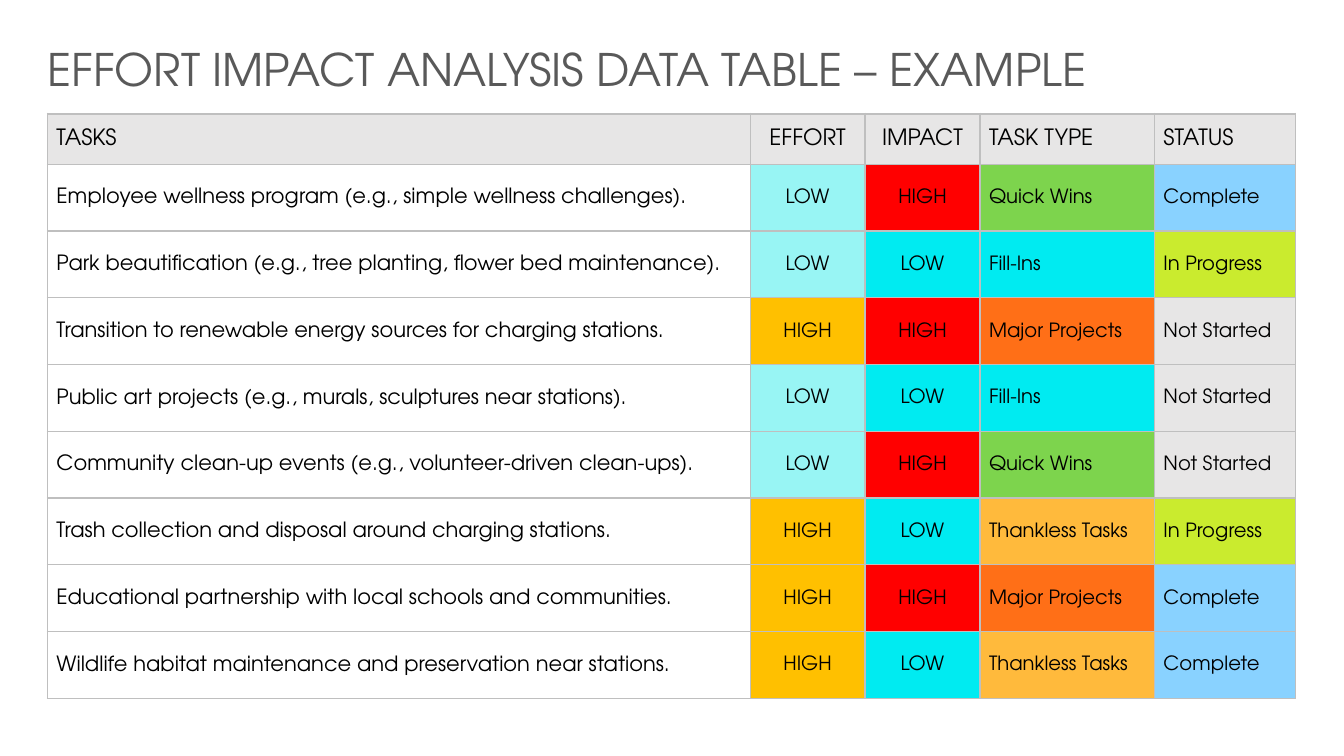
from pptx import Presentation
from pptx.dml.color import RGBColor
from pptx.enum.text import MSO_ANCHOR as Anchor, PP_ALIGN as Align
from pptx.oxml.ns import qn
from pptx.util import Inches, Pt
from lxml.etree import SubElement

HEADING = "EFFORT IMPACT ANALYSIS DATA TABLE – EXAMPLE"
HEADERS = ("TASKS", "EFFORT", "IMPACT", "TASK TYPE", "STATUS")
TASKS = [
    ("Employee wellness program (e.g., simple wellness challenges).", "LOW", "HIGH", "Quick Wins", "Complete"),
    ("Park beautification (e.g., tree planting, flower bed maintenance).", "LOW", "LOW", "Fill-Ins", "In Progress"),
    ("Transition to renewable energy sources for charging stations.", "HIGH", "HIGH", "Major Projects", "Not Started"),
    ("Public art projects (e.g., murals, sculptures near stations).", "LOW", "LOW", "Fill-Ins", "Not Started"),
    ("Community clean-up events (e.g., volunteer-driven clean-ups).", "LOW", "HIGH", "Quick Wins", "Not Started"),
    ("Trash collection and disposal around charging stations.", "HIGH", "LOW", "Thankless Tasks", "In Progress"),
    ("Educational partnership with local schools and communities.", "HIGH", "HIGH", "Major Projects", "Complete"),
    ("Wildlife habitat maintenance and preservation near stations.", "HIGH", "LOW", "Thankless Tasks", "Complete"),
]

COLORS = {
    "heading": "595959", "text": "000000", "border": "BFBFBF",
    "header": "E7E6E6", "task": "FFFFFF",
    "EFFORT LOW": "98F5F4", "EFFORT HIGH": "FFC000",
    "IMPACT LOW": "00EBF1", "IMPACT HIGH": "FF0000",
    "Quick Wins": "7DD44D", "Fill-Ins": "00EBF1",
    "Major Projects": "FF6F17", "Thankless Tasks": "FFBA3C",
    "Complete": "89D2FF", "In Progress": "CAEB2E", "Not Started": "E7E6E6",
}
FONT = "TeX Gyre Adventor"
COLUMN_WIDTHS = (6.97, 1.14, 1.14, 1.73, 1.4)
TABLE_LEFT, TABLE_TOP, TABLE_HEIGHT, HEADER_HEIGHT = 0.47, 1.13, 5.8, 0.5
CENTERED = ("EFFORT", "IMPACT")


def style_text(paragraph, size, color, align):
    paragraph.alignment = align
    font = paragraph.font
    for target in (font, *(run.font for run in paragraph.runs)):
        for name, value in {"name": FONT, "size": Pt(size), "bold": False}.items():
            setattr(target, name, value)
        target.color.rgb = RGBColor.from_string(COLORS[color])


def fill_key(row, header, value):
    if row == 0:
        return "header"
    if header == "TASKS":
        return "task"
    return f"{header} {value}" if header in CENTERED else value


def add_borders(cell, top_width):
    properties = cell._tc.get_or_add_tcPr()
    widths = {"a:lnL": 1, "a:lnR": 1, "a:lnT": top_width, "a:lnB": 1}
    for position, (side, width) in enumerate(widths.items()):
        line = SubElement(properties, qn(side), w=str(Pt(width)))
        SubElement(SubElement(line, qn("a:solidFill")), qn("a:srgbClr"), val=COLORS["border"])
        properties.insert(position, line)


def fill_cell(cell, row, header, value):
    centered = header in CENTERED
    cell.text = value
    formats = {
        "vertical_anchor": Anchor.MIDDLE,
        "margin_left": Inches(0.01 if centered else 0.09),
        "margin_right": Inches(0.01),
        "margin_top": Inches(0.01),
        "margin_bottom": 0,
    }
    for name, setting in formats.items():
        setattr(cell, name, setting)
    size = 16 if row == 0 else 15 if header == "TASKS" else 14
    style_text(cell.text_frame.paragraphs[0], size, "text", Align.CENTER if centered else Align.LEFT)
    cell.fill.solid()
    cell.fill.fore_color.rgb = RGBColor.from_string(COLORS[fill_key(row, header, value)])
    add_borders(cell, 2.25 if row == 0 else 1)


def add_heading(slide):
    heading = slide.shapes.title
    for name, length in {"left": 0.37, "top": 0.36, "width": 12.06, "height": 0.64}.items():
        setattr(heading, name, Inches(length))
    heading.text_frame.text = HEADING
    heading.text_frame.vertical_anchor = Anchor.TOP
    style_text(heading.text_frame.paragraphs[0], 32, "heading", Align.LEFT)


def add_tasks(slide):
    rows = [HEADERS, *TASKS]
    table = slide.shapes.add_table(
        len(rows), len(HEADERS), Inches(TABLE_LEFT), Inches(TABLE_TOP),
        Inches(sum(COLUMN_WIDTHS)), Inches(TABLE_HEIGHT)).table
    for column, width in zip(table.columns, COLUMN_WIDTHS):
        column.width = Inches(width)
    task_height = (TABLE_HEIGHT - HEADER_HEIGHT) / len(TASKS)
    for row, values in enumerate(rows):
        table.rows[row].height = Inches(task_height if row else HEADER_HEIGHT)
        for column, (header, value) in enumerate(zip(HEADERS, values)):
            fill_cell(table.cell(row, column), row, header, value)


def main():
    deck = Presentation()
    deck.slide_width, deck.slide_height = Inches(13.33), Inches(7.5)
    slide = deck.slides.add_slide(deck.slide_layouts[5])
    add_heading(slide)
    add_tasks(slide)
    deck.save("out.pptx")


if __name__ == "__main__":
    main()
